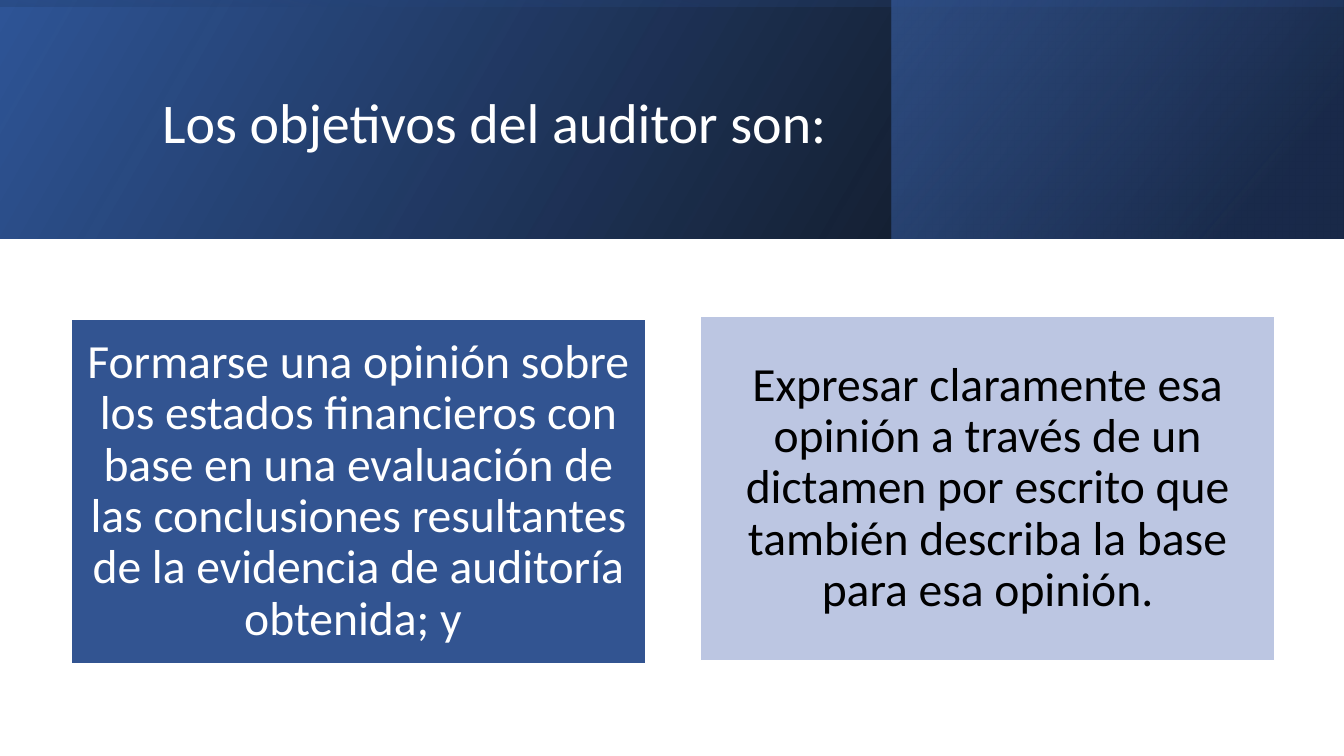
import pptx
import pptx.dml.color
import pptx.enum.shapes
import pptx.enum.text
import pptx.oxml.ns
import pptx.util
from lxml import etree

Inches = pptx.util.Inches
Pt = pptx.util.Pt


def color(hex_text):
    return pptx.dml.color.RGBColor.from_string(hex_text)


def add_rectangle(left, top, width, height):
    box = page.shapes.add_shape(
        pptx.enum.shapes.MSO_SHAPE.RECTANGLE,
        Inches(left), Inches(top), Inches(width), Inches(height))
    box.shadow.inherit = False
    return box


deck = pptx.Presentation()
deck.slide_width = Inches(13.33)
deck.slide_height = Inches(7.5)
page = deck.slides.add_slide(deck.slide_layouts[6])

# Header bands: place, rotation, clockwise gradient angle,
# and stops as (position %, colour, opacity %)
header_bands = [
    ((0, 0, 13.33, 2.37), 0, 330,
     [(0, "000000", 96), (100, "2F5597", 100)]),
    ((8.84, 0, 4.48, 2.37), 0, 320,
     [(19, "203864", 68), (100, "4472C4", 48)]),
    ((5.48, -5.48, 2.37, 13.33), 270, 350,
     [(23, "2F5597", 16), (99, "000000", 45)]),
]
for place, rotation, angle, stops in header_bands:
    band = add_rectangle(*place)
    band.rotation = rotation
    band.element.spPr.find(pptx.oxml.ns.qn("a:xfrm")).set("flipH", "1")
    band.line.fill.background()
    band.fill.gradient()
    band.fill.gradient_angle = 360 - angle
    for stop, (position, hex_text, opacity) in zip(band.fill.gradient_stops, stops):
        stop.position = position / 100
        stop.color.rgb = color(hex_text)
    color_nodes = band.element.spPr.iter(pptx.oxml.ns.qn("a:srgbClr"))
    for node, (position, hex_text, opacity) in zip(list(color_nodes), stops):
        alpha = etree.SubElement(node, pptx.oxml.ns.qn("a:alpha"))
        alpha.set("val", str(opacity * 1000))

title = page.shapes.add_textbox(Inches(1.51), Inches(0.38), Inches(10.63), Inches(1.72))
title.text_frame.word_wrap = True
title.text_frame.vertical_anchor = pptx.enum.text.MSO_ANCHOR.MIDDLE
para = title.text_frame.paragraphs[0]
para.text = "Los objetivos del auditor son:"
para.line_spacing = 0.9
para.font.name = "Calibri"
para.font.size = Pt(40)
para.font.color.rgb = color("FFFFFF")

objectives = [
    (0.71, 3.17, "325491", "FFFFFF",
     "Formarse una opinión sobre los estados financieros con base en una "
     "evaluación de las conclusiones resultantes de la evidencia de auditoría "
     "obtenida; y "),
    (6.95, 3.14, "BCC6E2", "000000",
     "Expresar claramente esa opinión a través de un dictamen por escrito que "
     "también describa la base para esa opinión."),
]
for left, top, fill, text_color, wording in objectives:
    box = add_rectangle(left, top, 5.69, 3.41)
    box.fill.solid()
    box.fill.fore_color.rgb = color(fill)
    box.line.color.rgb = color("FFFFFF")
    box.line.width = Pt(1)
    frame = box.text_frame
    frame.word_wrap = True
    frame.vertical_anchor = pptx.enum.text.MSO_ANCHOR.MIDDLE
    frame.margin_left = frame.margin_right = Inches(0.14)
    frame.margin_top = frame.margin_bottom = Inches(0.14)
    para = frame.paragraphs[0]
    para.text = wording
    para.alignment = pptx.enum.text.PP_ALIGN.CENTER
    para.line_spacing = 0.9
    para.font.name = "Calibri"
    para.font.size = Pt(34)
    para.font.color.rgb = color(text_color)

deck.save("out.pptx")
